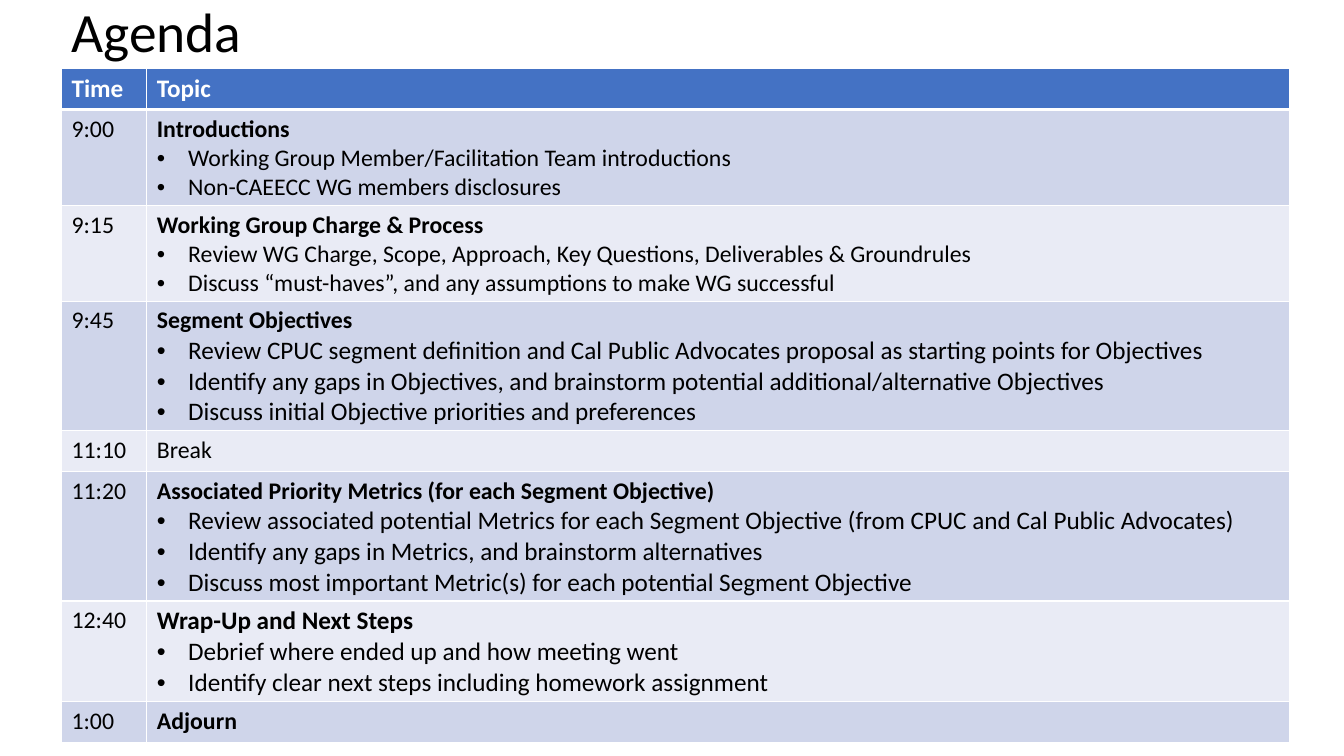
from dataclasses import dataclass

from lxml.etree import SubElement
from pptx import Presentation
from pptx.dml.color import RGBColor
from pptx.enum.text import MSO_ANCHOR
from pptx.oxml import parse_xml
from pptx.oxml.ns import nsdecls, qn
from pptx.util import Cm, Pt

WHITE = RGBColor(0xFF, 0xFF, 0xFF)
BLACK = RGBColor(0x00, 0x00, 0x00)
HEADER_BLUE = RGBColor(0x44, 0x72, 0xC4)
BANDS = (RGBColor(0xCF, 0xD5, 0xEA), RGBColor(0xE9, 0xEB, 0xF5))

FONT = "Calibri"
LEFT = Cm(1.55)
TABLE_TOP = Cm(1.73)
COLUMN_WIDTHS = (Cm(2.15), Cm(28.81))
ROW_HEIGHT = Cm(1.03)
BULLET_INDENT = Cm(0.79)
THIN, THICK = Pt(1), Pt(3)


@dataclass(frozen=True)
class AgendaItem:
    time: str
    topic: str
    points: tuple[str, ...] = ()
    topic_size: float = 17
    point_size: float = 17
    bold: bool = True


AGENDA = (
    AgendaItem("9:00", "Introductions", (
        "Working Group Member/Facilitation Team introductions",
        "Non-CAEECC WG members disclosures",
    )),
    AgendaItem("9:15", "Working Group Charge & Process", (
        "Review WG Charge, Scope, Approach, Key Questions, Deliverables & Groundrules",
        "Discuss “must-haves”, and any assumptions to make WG successful",
    )),
    AgendaItem("9:45", "Segment Objectives", (
        "Review CPUC segment definition and Cal Public Advocates proposal as starting points for Objectives",
        "Identify any gaps in Objectives, and brainstorm potential additional/alternative Objectives",
        "Discuss initial Objective priorities and preferences",
    ), point_size=18),
    AgendaItem("11:10", "Break", bold=False),
    AgendaItem("11:20", "Associated Priority Metrics (for each Segment Objective)", (
        "Review associated potential Metrics for each Segment Objective (from CPUC and Cal Public Advocates)",
        "Identify any gaps in Metrics, and brainstorm alternatives",
        "Discuss most important Metric(s) for each potential Segment Objective",
    ), point_size=18),
    AgendaItem("12:40", "Wrap-Up and Next Steps", (
        "Debrief where ended up and how meeting went",
        "Identify clear next steps including homework assignment",
    ), topic_size=18, point_size=18),
    AgendaItem("1:00", "Adjourn"),
)


def write(para, text: str, *, size: float, bold: bool = False,
          color: RGBColor = BLACK, bullet: bool = False) -> None:
    span = para.add_run()
    span.text = text
    span.font.name = FONT
    span.font.size = Pt(size)
    span.font.bold = bold
    span.font.color.rgb = color
    if bullet:
        properties = para._p.get_or_add_pPr()
        properties.set("marL", str(BULLET_INDENT))
        properties.set("indent", str(-BULLET_INDENT))
        SubElement(properties, qn("a:buFont")).set("typeface", "Arial")
        SubElement(properties, qn("a:buChar")).set("char", "•")


def style_cell(cell, fill: RGBColor, top: int = THIN, bottom: int = THIN) -> None:
    """Fill the cell and give it white borders."""
    cell.fill.solid()
    cell.fill.fore_color.rgb = fill
    properties = cell._tc.get_or_add_tcPr()
    widths = {"lnL": THIN, "lnR": THIN, "lnT": top, "lnB": bottom}
    for index, (side, width) in enumerate(widths.items()):
        properties.insert(index, parse_xml(
            f'<a:{side} {nsdecls("a")} w="{width}"><a:solidFill>'
            f'<a:srgbClr val="{WHITE}"/></a:solidFill></a:{side}>'))


def add_title(page, text: str) -> None:
    box = page.shapes.add_textbox(LEFT, 0, Cm(29.21), TABLE_TOP)
    frame = box.text_frame
    frame.word_wrap = True
    frame.vertical_anchor = MSO_ANCHOR.MIDDLE
    para = frame.paragraphs[0]
    para.line_spacing = 0.9
    write(para, text, size=39.6)


def add_agenda(page, items: tuple[AgendaItem, ...]) -> None:
    rows = len(items) + 1
    holder = page.shapes.add_table(rows, len(COLUMN_WIDTHS), LEFT, TABLE_TOP,
                                   sum(COLUMN_WIDTHS), ROW_HEIGHT * rows)
    table = holder.table
    table.horz_banding = False
    for column, width in zip(table.columns, COLUMN_WIDTHS):
        column.width = width

    for cell, heading in zip(table.rows[0].cells, ("Time", "Topic")):
        style_cell(cell, HEADER_BLUE, bottom=THICK)
        write(cell.text_frame.paragraphs[0], heading, size=18, bold=True, color=WHITE)

    for index, item in enumerate(items):
        time_cell, topic_cell = table.rows[index + 1].cells
        for cell in (time_cell, topic_cell):
            style_cell(cell, BANDS[index % 2], top=THIN if index else THICK)
        write(time_cell.text_frame.paragraphs[0], item.time, size=17)
        frame = topic_cell.text_frame
        write(frame.paragraphs[0], item.topic, size=item.topic_size, bold=item.bold)
        for point in item.points:
            write(frame.add_paragraph(), point, size=item.point_size, bullet=True)


def main() -> None:
    deck = Presentation()
    deck.slide_width, deck.slide_height = Cm(33.87), Cm(19.05)
    page = deck.slides.add_slide(deck.slide_layouts[6])
    add_title(page, "Agenda")
    add_agenda(page, AGENDA)
    deck.save("out.pptx")


if __name__ == "__main__":
    main()
